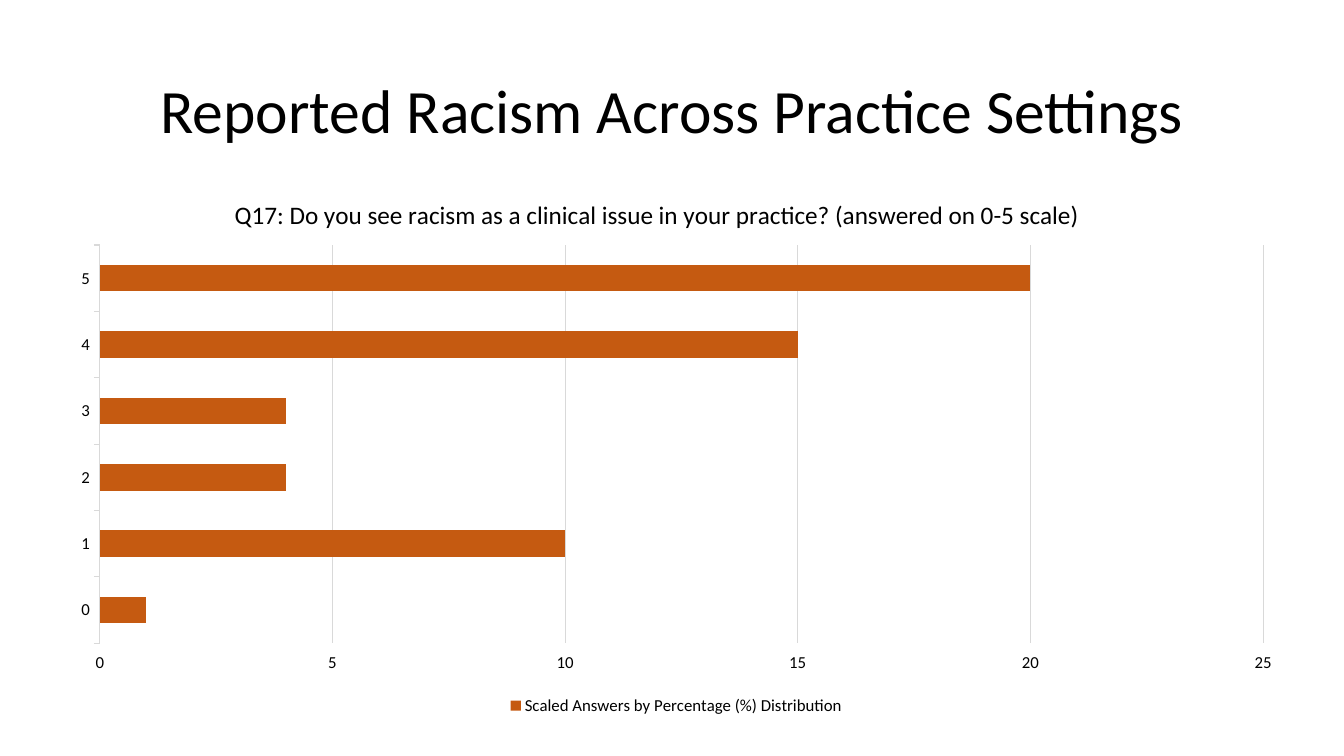
from lxml import etree
from pptx import Presentation
from pptx import util as u
from pptx.chart.data import CategoryChartData
from pptx.dml.color import RGBColor
from pptx.enum import chart as ch, text
from pptx.oxml.ns import qn

# Content
HEADING = "Reported Racism Across Practice Settings"
QUESTION = "Q17: Do you see racism as a clinical issue in your practice? (answered on 0-5 scale)"
SERIES = "Scaled Answers by Percentage (%) Distribution"
ANSWERS = {"0": 1, "1": 10, "2": 4, "3": 4, "4": 15, "5": 20}

BLACK = RGBColor(0x00, 0x00, 0x00)
GRID = RGBColor(0xD9, 0xD9, 0xD9)
ORANGE = RGBColor(0xC5, 0x5A, 0x11)
FONT = "Calibri"

# Places: left, top, width, height in inches
HEADING_AT = (0.92, 0.4, 11.5, 1.45)
CHART_AT = (0.56, 1.69, 12.3, 5.45)
# Shares of the chart's size
QUESTION_SHARE = {"x": 0.14, "y": 0.04}
PLOT_SHARE = {"x": 0.035, "y": 0.136, "w": 0.938, "h": 0.725}


def set_all(target, values):
    for name, value in values.items():
        setattr(target, name, value)


def set_font(font, size):
    set_all(font, {"name": FONT, "size": u.Pt(size), "bold": False})
    font.color.rgb = BLACK


def set_line(line, color, width=0.75):
    line.color.rgb = color
    line.width = u.Pt(width)


def place(element, index, shares, inner=False):
    """Fix a chart part at shares of the chart's size."""
    for old in element.findall(qn("c:layout")):
        element.remove(old)
    layout = etree.Element(qn("c:layout"))
    manual = etree.SubElement(layout, qn("c:manualLayout"))
    settings = [("layoutTarget", "inner")] if inner else []
    settings += [("xMode", "edge"), ("yMode", "edge"), *shares.items()]
    for tag, value in settings:
        etree.SubElement(manual, qn("c:" + tag)).set("val", str(value))
    element.insert(index, layout)


deck = Presentation()
set_all(deck, {"slide_width": u.Inches(13.33), "slide_height": u.Inches(7.5)})
page = deck.slides.add_slide(deck.slide_layouts[6])

# Heading
frame = page.shapes.add_textbox(*map(u.Inches, HEADING_AT)).text_frame
set_all(frame, {"word_wrap": True, "vertical_anchor": text.MSO_ANCHOR.MIDDLE})
para = frame.paragraphs[0]
set_all(para, {"alignment": text.PP_ALIGN.CENTER, "line_spacing": 0.9})
span = para.add_run()
span.text = HEADING
set_font(span.font, 44)

# Bar chart
data = CategoryChartData()
data.categories = list(ANSWERS)
data.add_series(SERIES, list(ANSWERS.values()))
chart = page.shapes.add_chart(
    ch.XL_CHART_TYPE.BAR_CLUSTERED, *map(u.Inches, CHART_AT), data).chart
set_font(chart.font, 10)
plot = chart.plots[0]
set_all(plot, {"gap_width": 150, "vary_by_categories": False})
fill = plot.series[0].format.fill
fill.solid()
fill.fore_color.rgb = ORANGE

# Chart title
chart.has_title = True
title = chart.chart_title
title.include_in_layout = False
title.text_frame.text = QUESTION
set_font(title.text_frame.paragraphs[0].runs[0].font, 18)

# Axes
answers, percents = chart.category_axis, chart.value_axis
for axis in (answers, percents):
    axis.major_tick_mark = ch.XL_TICK_MARK.OUTSIDE
    set_font(axis.tick_labels.font, 12)
set_line(answers.format.line, GRID)
percents.format.line.fill.background()
set_all(percents, {"minimum_scale": 0, "maximum_scale": 25, "major_unit": 5,
                   "has_major_gridlines": True})
set_line(percents.major_gridlines.format.line, GRID)

# Legend
chart.has_legend = True
set_all(chart.legend, {"position": ch.XL_LEGEND_POSITION.BOTTOM,
                       "include_in_layout": False})
set_font(chart.legend.font, 12)

# Places of the chart's parts
body = chart.element.find(qn("c:chart"))
place(body.find(qn("c:title")), 1, QUESTION_SHARE)
place(body.find(qn("c:plotArea")), 0, PLOT_SHARE, inner=True)

deck.save("out.pptx")
